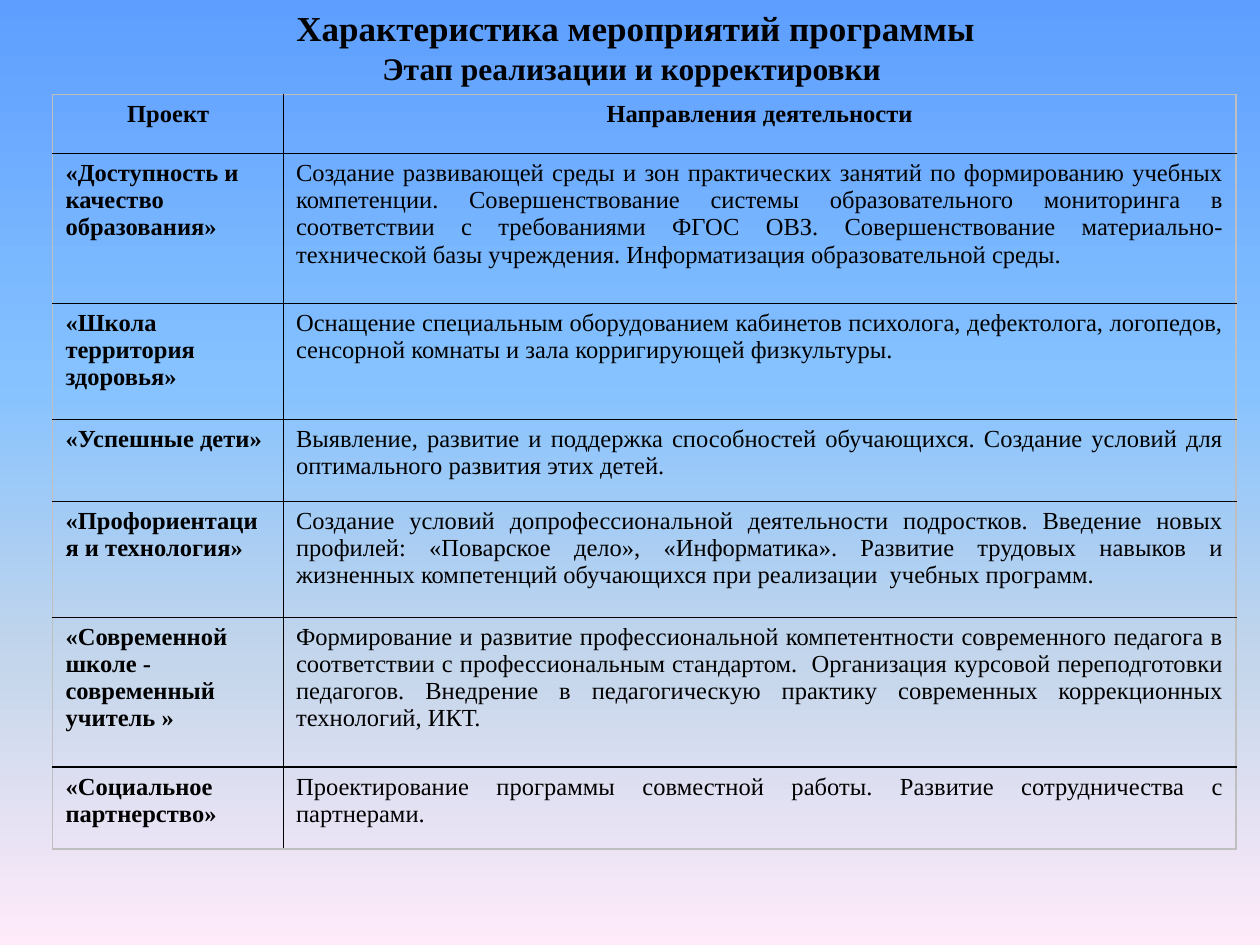
from lxml import etree
from pptx import Presentation
from pptx.dml.color import RGBColor
from pptx.enum.text import MSO_ANCHOR, PP_ALIGN
from pptx.oxml.ns import qn
from pptx.util import Inches, Pt

CENTER, LEFT, JUSTIFY = PP_ALIGN.CENTER, PP_ALIGN.LEFT, PP_ALIGN.JUSTIFY
MIDDLE = MSO_ANCHOR.MIDDLE

COLORS = {
    "text": "000000",
    "grid": "000000",
    "frame": "BFBFBF",
    "sky": "5E9EFF",
    "light_sky": "85C2FF",
    "haze": "C4D6EB",
    "pink": "FFEBFA",
}
BACKGROUND_STOPS = [(0, "sky"), (40, "light_sky"), (70, "haze"), (100, "pink")]

HEADINGS = [
    ("Характеристика мероприятий программы", 20),
    ("Этап реализации и корректировки ", 18),
]
COLUMN_WIDTHS = [1.83, 7.56]
ROW_HEIGHTS = [0.47, 1.19, 0.92, 0.65, 0.92, 1.19, 0.65]
PROJECTS = [
    ("Проект", "Направления деятельности"),
    ("«Доступность и качество образования»",
     "Создание развивающей среды и зон практических занятий по формированию учебных "
     "компетенции. Совершенствование системы образовательного мониторинга в соответствии "
     "с требованиями ФГОС ОВЗ. Совершенствование материально-технической базы учреждения. "
     "Информатизация образовательной среды."),
    ("«Школа территория здоровья»",
     "Оснащение специальным оборудованием кабинетов психолога, дефектолога, логопедов, "
     "сенсорной комнаты и зала корригирующей физкультуры."),
    ("«Успешные дети»",
     "Выявление, развитие и поддержка способностей обучающихся. Создание условий для "
     "оптимального развития этих детей."),
    ("«Профориентация и технология»",
     "Создание условий допрофессиональной деятельности подростков. Введение новых "
     "профилей: «Поварское дело», «Информатика». Развитие трудовых навыков и жизненных "
     "компетенций обучающихся при реализации  учебных программ."),
    ("«Современной школе - современный учитель »",
     "Формирование и развитие профессиональной компетентности современного педагога в "
     "соответствии с профессиональным стандартом.  Организация курсовой переподготовки "
     "педагогов. Внедрение в педагогическую практику современных коррекционных "
     "технологий, ИКТ."),
    ("«Социальное партнерство»",
     "Проектирование программы совместной работы. Развитие сотрудничества с партнерами."),
]


class SlideBuilder:
    """Holds the text style and the slide being filled."""

    font_name = "Times New Roman"
    table_size = 14

    def __init__(self, slide):
        self.slide = slide

    def background(self, stops):
        fill = self.slide.background.fill
        fill.gradient()
        fill.gradient_angle = 270
        stop_list = self.slide.element.find(".//" + qn("a:gsLst"))
        for old_stop in list(stop_list):
            stop_list.remove(old_stop)
        for percent, color in stops:
            stop = etree.SubElement(stop_list, qn("a:gs"), pos=str(percent * 1000))
            etree.SubElement(stop, qn("a:srgbClr"), val=COLORS[color])

    def add_text(self, paragraph, text, size, bold, alignment):
        paragraph.alignment = alignment
        run = paragraph.add_run()
        run.text = text
        style = {"name": self.font_name, "size": Pt(size), "bold": bold}
        for attribute, value in style.items():
            setattr(run.font, attribute, value)
        run.font.color.rgb = RGBColor.from_string(COLORS["text"])

    def title(self, headings, left, top, width, height):
        title = self.slide.shapes.title
        place = {"left": left, "top": top, "width": width, "height": height}
        for attribute, value in place.items():
            setattr(title, attribute, Inches(value))
        frame = title.text_frame
        frame.word_wrap = True
        frame.vertical_anchor = MIDDLE
        for index, (text, size) in enumerate(headings):
            paragraph = frame.add_paragraph() if index else frame.paragraphs[0]
            paragraph.space_before = Pt(0)
            self.add_text(paragraph, text, size, True, CENTER)

    def borders(self, cell, outer_sides):
        """Draw a grey line on the outer sides and a black one on the others."""
        properties = cell._tc.get_or_add_tcPr()
        for index, side in enumerate(("lnL", "lnR", "lnT", "lnB")):
            color, points = ("frame", 0.75) if side in outer_sides else ("grid", 1)
            line = etree.Element(qn("a:" + side), w=str(Pt(points)))
            fill = etree.SubElement(line, qn("a:solidFill"))
            etree.SubElement(fill, qn("a:srgbClr"), val=COLORS[color])
            properties.insert(index, line)

    def table(self, rows, left, top, widths, heights):
        table = self.slide.shapes.add_table(
            len(rows), len(widths), Inches(left), Inches(top),
            Inches(sum(widths)), Inches(sum(heights))).table
        for column, width in zip(table.columns, widths):
            column.width = Inches(width)
        for table_row, height in zip(table.rows, heights):
            table_row.height = Inches(height)
        last_row, last_column = len(rows) - 1, len(widths) - 1
        for r, row in enumerate(rows):
            for c, text in enumerate(row):
                cell = table.cell(r, c)
                cell.fill.background()
                alignment = CENTER if r == 0 else (LEFT, JUSTIFY)[c]
                self.add_text(cell.text_frame.paragraphs[0], text, self.table_size,
                              r == 0 or c == 0, alignment)
                edges = {"lnL": c == 0, "lnR": c == last_column,
                         "lnT": r == 0, "lnB": r == last_row}
                self.borders(cell, [side for side, outer in edges.items() if outer])


def main():
    presentation = Presentation()
    presentation.slide_width = Inches(10)
    presentation.slide_height = Inches(7.5)
    title_only = presentation.slide_layouts[5]
    builder = SlideBuilder(presentation.slides.add_slide(title_only))
    builder.background(BACKGROUND_STOPS)
    builder.title(HEADINGS, 0.42, 0, 9.25, 0.74)
    builder.table(PROJECTS, 0.42, 0.75, COLUMN_WIDTHS, ROW_HEIGHTS)
    presentation.save("out.pptx")


if __name__ == "__main__":
    main()
